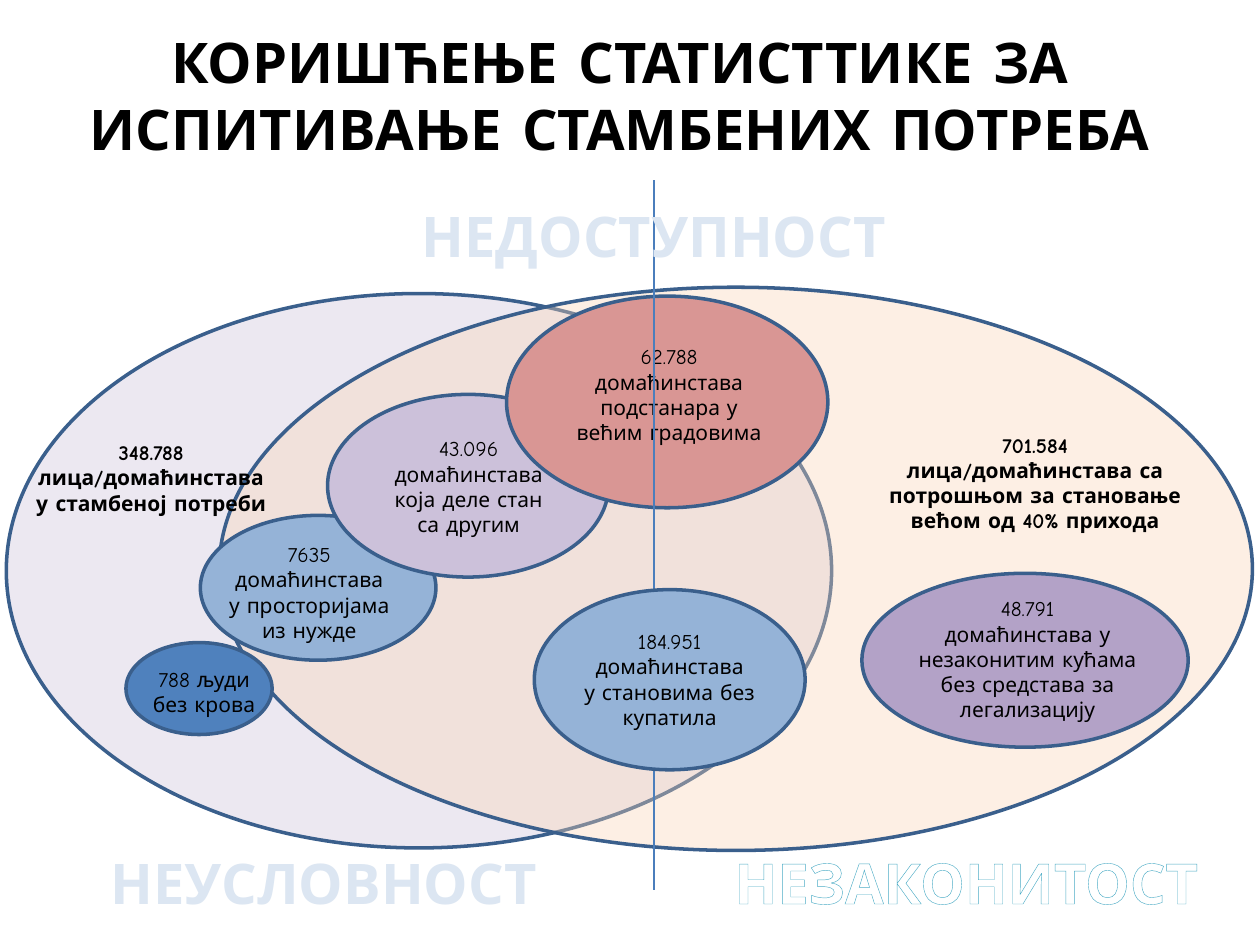
"""Build the slide on statistics of housing needs as overlapping ovals."""
from dataclasses import dataclass

from lxml.etree import SubElement
from pptx import Presentation
from pptx.dml.color import RGBColor
from pptx.enum.shapes import MSO_CONNECTOR as Connector, MSO_SHAPE as Shape
from pptx.enum.text import MSO_AUTO_SIZE as AutoSize, PP_ALIGN as Align
from pptx.oxml import parse_xml
from pptx.oxml.ns import nsdecls, qn
from pptx.util import Inches, Pt


@dataclass(frozen=True)
class Theme:
    font: str = "Comic Neue"
    ink: str = "000000"
    edge: str = "3A5F8C"
    axis: str = "4B7EBC"
    lilac: str = "CCC1DA"
    peach: str = "FCD5B5"
    blue: str = "4F81BD"
    sky: str = "95B3D7"
    rose: str = "D99694"
    violet: str = "B3A2C7"
    ice: str = "DCE6F2"
    aqua: str = "93CDDD"
    teal: str = "4BACC6"
    white: str = "FFFFFF"
    note_size: int = 12
    title_size: int = 32
    edge_width: float = 2
    axis_width: float = 0.75
    sheer: int = 36


theme = Theme()
deck = Presentation()
deck.slide_width, deck.slide_height = Inches(10), Inches(7.5)
page = deck.slides.add_slide(deck.slide_layouts[6])
column, row = deck.slide_width / 100, deck.slide_height / 75

note_frame = {"word_wrap": True, "auto_size": AutoSize.SHAPE_TO_FIT_TEXT}
title_frame = note_frame | {
    "margin_left": Inches(0.07), "margin_right": Inches(0.07),
    "margin_top": Inches(0.04), "margin_bottom": Inches(0.04),
}
word_frame = title_frame | {"word_wrap": False}
note_font = {"name": theme.font, "size": Pt(theme.note_size), "bold": False}
lead_font = note_font | {"bold": True}
title_font = lead_font | {"size": Pt(theme.title_size)}


def add_oval(left, top, width, height, color, opacity=100):
    oval = page.shapes.add_shape(
        Shape.OVAL, int(left * column), int(top * row), int(width * column), int(height * row))
    oval.shadow.inherit = False
    oval.fill.solid()
    oval.fill.fore_color.rgb = RGBColor.from_string(color)
    oval.line.color.rgb = RGBColor.from_string(theme.edge)
    oval.line.width = Pt(theme.edge_width)
    if opacity < 100:
        tint = oval.fill._xPr.find(qn("a:solidFill"))[0]
        SubElement(tint, qn("a:alpha"), val=str(opacity * 1000))


def add_text(left, top, width, height, lines, font=note_font, layout=note_frame):
    box = page.shapes.add_textbox(
        int(left * column), int(top * row), int(width * column), int(height * row))
    frame = box.text_frame
    for name, value in layout.items():
        setattr(frame, name, value)
    for index, line in enumerate(lines):
        para = frame.paragraphs[0] if index == 0 else frame.add_paragraph()
        para.alignment = Align.CENTER
        span = para.add_run()
        span.text = line
        for name, value in font.items():
            setattr(span.font, name, value)
        span.font.color.rgb = RGBColor.from_string(theme.ink)
    return span


add_oval(0.5, 23.3, 65.5, 44, theme.lilac, theme.sheer)
add_oval(17.4, 22.8, 82, 44.7, theme.peach, theme.sheer)
add_oval(10, 51, 11.6, 7.3, theme.blue)
add_oval(15.9, 40.9, 18.7, 11.5, theme.sky)
add_text(10, 52.4, 12.4, 5, ["788 људи", "без крова"])
add_oval(26, 31.3, 22.3, 14.5, theme.lilac)
add_text(29.7, 34.1, 15, 9.1, ["43.096", "домаћинстава која деле стан са другим"])
add_oval(40.2, 23.5, 25.5, 16.8, theme.rose)
add_text(44, 26.8, 18.2, 9.1, ["62.788", "домаћинстава подстанара у већим градовима"])

axis = page.shapes.add_connector(
    Connector.STRAIGHT, int(51.9 * column), int(14.3 * row), int(51.9 * column), int(70.6 * row))
axis.line.color.rgb = RGBColor.from_string(theme.axis)
axis.line.width = Pt(theme.axis_width)
SubElement(axis._element.spPr, qn("a:effectLst"))

add_text(16.2, 42.5, 16.7, 9.1, ["7635", "домаћинстава", "у просторијама из нужде"])
add_oval(68.4, 45.5, 25.9, 13.8, theme.violet)
add_text(70.9, 46.8, 21.3, 11.1,
         ["48.791", "домаћинстава у незаконитим кућама без средстава за легализацију"])
add_text(1.6, 34.4, 20.8, 7.1,
         ["348.788", "лица/домаћинстава у стамбеној потреби"], lead_font)
add_text(68.4, 33.8, 27.5, 9.1,
         ["701.584", "лица/домаћинстава са потрошњом за становање већом од 40% прихода"], lead_font)
add_oval(42.4, 46.8, 21.5, 14.3, theme.sky)
add_text(43.8, 49.4, 18.7, 9.1, ["184.951", "домаћинстава", "у становима без купатила"])
add_text(2.5, 1.8, 93.4, 11.5,
         ["КОРИШЋЕЊЕ СТАТИСТТИКЕ ЗА ИСПИТИВАЊЕ СТАМБЕНИХ ПОТРЕБА"], title_font, title_frame)

dotted = ("pct50", theme.blue, theme.ice, theme.blue)
striped = ("ltDnDiag", theme.aqua, theme.white, theme.teal)
for word, left, top, width, style in (
    ("НЕУСЛОВНОСТ", 7.6, 66.9, 36.2, dotted),
    ("НЕЗАКОНИТОСТ", 56.9, 66.9, 39.6, striped),
    ("НЕДОСТУПНОСТ", 31.6, 15.6, 40.6, dotted),
):
    span = add_text(left, top, width, 6.1, [word], title_font, word_frame)
    pattern, front, back, outline = style
    marks = span.font._element
    marks.remove(marks.find(qn("a:solidFill")))
    marks.insert(0, parse_xml(
        f'<a:ln {nsdecls("a")} w="{Pt(1)}"><a:solidFill><a:srgbClr val="{outline}"/>'
        '</a:solidFill></a:ln>'))
    marks.insert(1, parse_xml(
        f'<a:pattFill {nsdecls("a")} prst="{pattern}"><a:fgClr><a:srgbClr val="{front}"/></a:fgClr>'
        f'<a:bgClr><a:srgbClr val="{back}"/></a:bgClr></a:pattFill>'))

deck.save("out.pptx")
